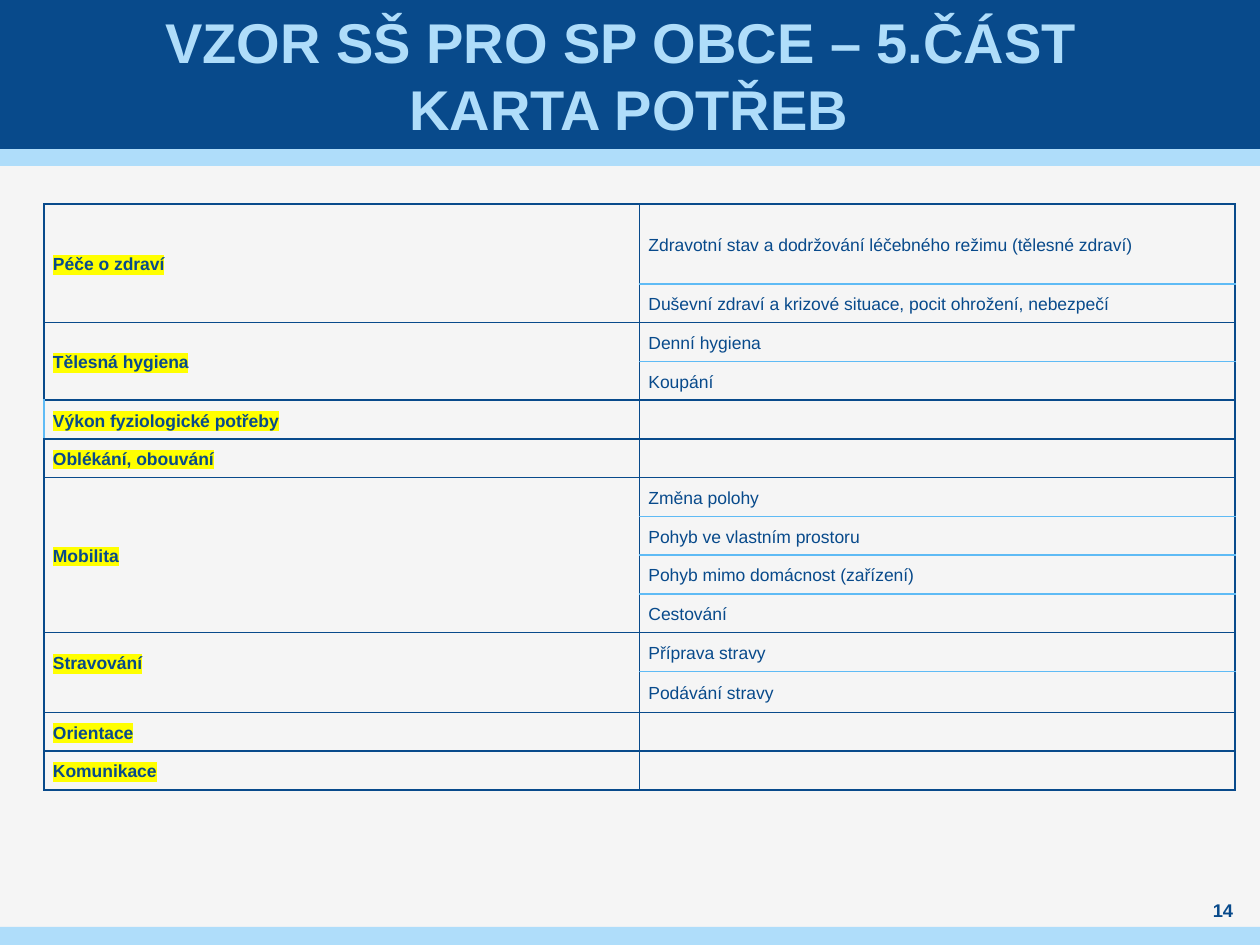
"""Builds the slide with the card of needs as a two-column table."""
from dataclasses import dataclass

from lxml.etree import SubElement
from pptx import Presentation
from pptx.dml.color import RGBColor
from pptx.enum.shapes import MSO_SHAPE
from pptx.enum.text import MSO_ANCHOR as Anchor, PP_ALIGN as Align
from pptx.oxml.ns import qn
from pptx.util import Pt

EMU_PER_PX = 914400 / 126

NEEDS = [
    ("Péče o zdraví", [
        "Zdravotní stav a dodržování léčebného režimu (tělesné zdraví)",
        "Duševní zdraví a krizové situace, pocit ohrožení, nebezpečí"]),
    ("Tělesná hygiena", ["Denní hygiena", "Koupání"]),
    ("Výkon fyziologické potřeby", [""]),
    ("Oblékání, obouvání", [""]),
    ("Mobilita", [
        "Změna polohy", "Pohyb ve vlastním prostoru",
        "Pohyb mimo domácnost (zařízení)", "Cestování"]),
    ("Stravování", ["Příprava stravy", "Podávání stravy"]),
    ("Orientace", [""]),
    ("Komunikace", [""]),
]
TALL_ROWS = {0: 80, 11: 41}
RAISED_NEED = "Stravování"
LIGHT_EDGE_NEED = "Výkon fyziologické potřeby"


@dataclass(frozen=True)
class Theme:
    """Colours and type sizes of the deck."""
    font: str = "Arial"
    paper: str = "F5F5F5"
    navy: str = "084A8B"
    sky: str = "AFDDFA"
    rule: str = "5FBBF5"
    marker: str = "FFFF00"
    title_pt: float = 32
    number_pt: float = 10.5
    body_pt: float = 10
    border_pt: float = 1


def px(length):
    """Turns pixels into EMU."""
    return round(length * EMU_PER_PX)


def rgb(value):
    """Turns a hex string into a colour."""
    return RGBColor.from_string(value)


class SlideBuilder:
    """Holds the theme and the current slide."""

    def __init__(self, slide, theme):
        """Keeps the slide and paints its background."""
        self.slide = slide
        self.theme = theme
        slide.background.fill.solid()
        slide.background.fill.fore_color.rgb = rgb(theme.paper)

    def band(self, top, height, color):
        """Draws a band over the full slide width."""
        band = self.slide.shapes.add_shape(
            MSO_SHAPE.RECTANGLE, 0, px(top), px(1260), px(height))
        band.shadow.inherit = False
        band.fill.solid()
        band.fill.fore_color.rgb = rgb(color)
        band.line.fill.background()

    def style(self, paragraph, size, color, bold):
        """Formats every run of a paragraph."""
        for run in paragraph.runs:
            run.font.name = self.theme.font
            run.font.size = Pt(size)
            run.font.bold = bold
            run.font.color.rgb = rgb(color)

    def text(self, left, top, width, height, words, size, color, inset=0):
        """Adds a centred bold text box."""
        frame = self.slide.shapes.add_textbox(
            px(left), px(top), px(width), px(height)).text_frame
        frame.word_wrap = True
        frame.vertical_anchor = Anchor.MIDDLE
        frame.margin_left = frame.margin_right = px(inset)
        frame.margin_top = frame.margin_bottom = 0
        frame.text = words
        for paragraph in frame.paragraphs:
            paragraph.alignment = Align.CENTER
            self.style(paragraph, size, color, True)

    def highlight(self, run):
        """Marks a run with the marker colour."""
        properties = run.font._element if hasattr(run.font, "_element") else run._r.get_or_add_rPr()
        mark = SubElement(properties, qn("a:highlight"))
        SubElement(mark, qn("a:srgbClr"), val=self.theme.marker)
        properties.find(qn("a:solidFill")).addnext(mark)

    def borders(self, cell, **colors):
        """Draws the four cell borders, navy unless a colour is given."""
        properties = cell._tc.get_or_add_tcPr()
        for order, side in enumerate("LRTB"):
            line = SubElement(properties, qn(f"a:ln{side}"),
                              w=str(Pt(self.theme.border_pt)))
            fill = SubElement(line, qn("a:solidFill"))
            SubElement(fill, qn("a:srgbClr"),
                       val=colors.get(side, self.theme.navy))
            properties.insert(order, line)

    def cell(self, cell, words, is_need=False, **edges):
        """Fills one table cell with text, background and borders."""
        cell.fill.solid()
        cell.fill.fore_color.rgb = rgb(self.theme.paper)
        cell.vertical_anchor = Anchor.MIDDLE
        cell.margin_left = cell.margin_right = px(9)
        cell.margin_top = cell.margin_bottom = 0
        self.borders(cell, **edges)
        if words:
            cell.text_frame.text = words
            paragraph = cell.text_frame.paragraphs[0]
            paragraph.line_spacing = 1.15
            self.style(paragraph, self.theme.body_pt, self.theme.navy, is_need)
            if is_need:
                self.highlight(paragraph.runs[0])

    def needs_table(self, left, top, width, height, needs):
        """Adds the table, one merged need cell beside its details."""
        count = sum(len(details) for _, details in needs)
        table = self.slide.shapes.add_table(
            count, 2, px(left), px(top), px(width), px(height)).table
        table.first_row = table.horz_banding = False
        common = (height - sum(TALL_ROWS.values())) / (count - len(TALL_ROWS))
        for index, row in enumerate(table.rows):
            row.height = px(TALL_ROWS.get(index, common))
        for column in table.columns:
            column.width = px(width / 2)
        first = 0
        for need, details in needs:
            last = first + len(details) - 1
            edge = self.theme.rule if need == LIGHT_EDGE_NEED else self.theme.navy
            for row, detail in enumerate(details, first):
                inner = {}
                if row > first:
                    inner["T"] = self.theme.rule
                if row < last:
                    inner["B"] = self.theme.rule
                self.cell(table.cell(row, 0), need if row == first else "",
                          True, L=edge)
                self.cell(table.cell(row, 1), detail, **inner)
            if last > first:
                table.cell(first, 0).merge(table.cell(last, 0))
            if need == RAISED_NEED:
                table.cell(first, 0).margin_bottom = px(20)
            first = last + 1


def main():
    """Builds and saves the slide."""
    deck = Presentation()
    deck.slide_width, deck.slide_height = px(1260), px(945)
    theme = Theme()
    page = SlideBuilder(deck.slides.add_slide(deck.slide_layouts[6]), theme)
    page.band(149, 17, theme.sky)
    page.band(0, 149, theme.navy)
    page.band(927, 18, theme.sky)
    page.text(49, 0, 1160, 149, "VZOR SŠ PRO SP OBCE – 5.ČÁST \vKARTA POTŘEB",
              theme.title_pt, theme.sky, inset=5)
    page.needs_table(44, 204, 1191, 586, NEEDS)
    page.text(1191, 898, 64, 25, "14", theme.number_pt, theme.navy)
    deck.save("out.pptx")


if __name__ == "__main__":
    main()
